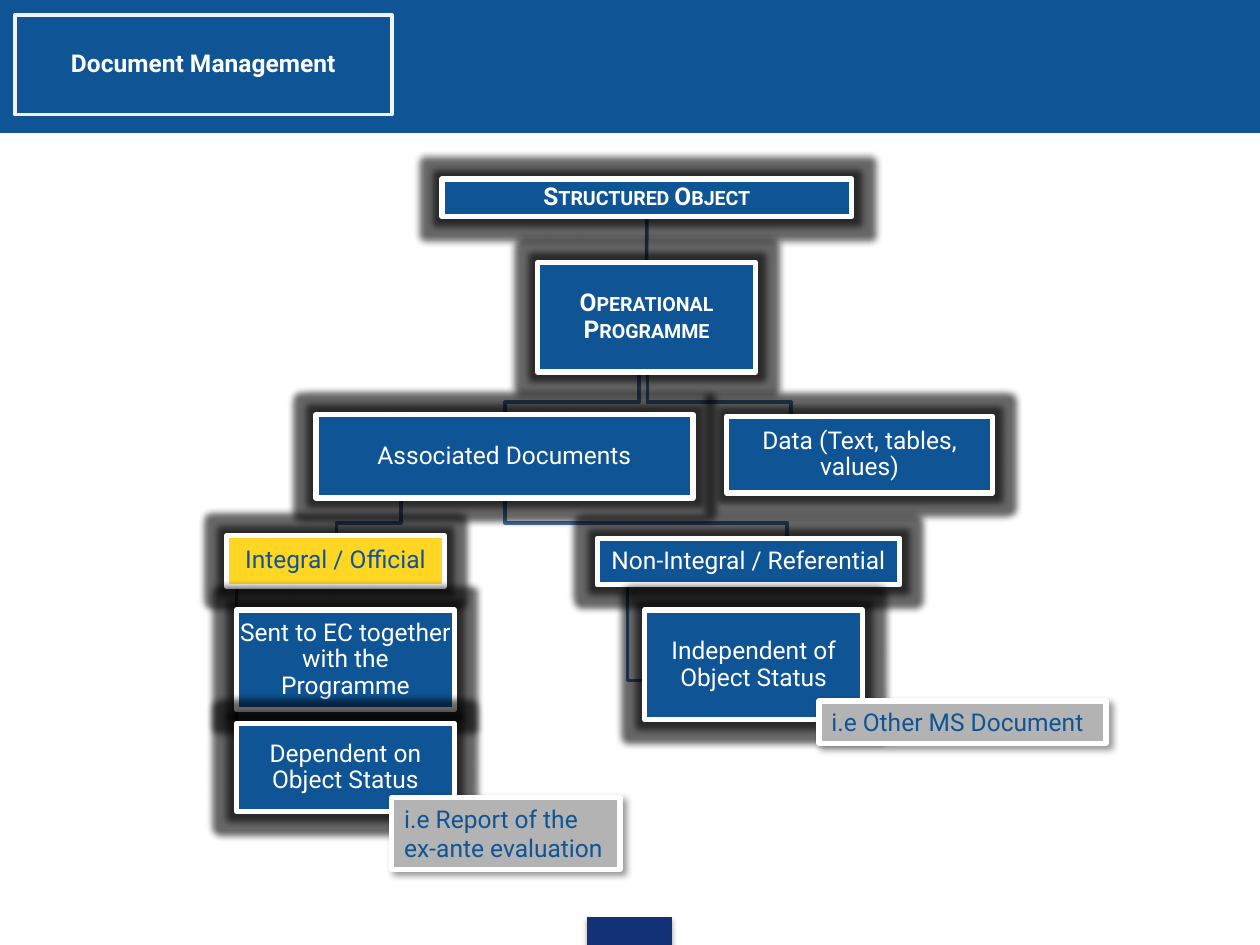
from lxml import etree
from pptx import Presentation
from pptx.dml.color import RGBColor
from pptx.enum import shapes, text
from pptx.oxml import ns
from pptx.util import Cm, Pt

COLOURS = {
    "blue": "0F5494", "navy": "133176", "yellow": "FFD624", "grey": "B3B3B3",
    "white": "FFFFFF", "frame": "F2F2F2", "elbow": "4875AC", "stem": "3F6797",
    "black": "000000",
}
FONT = "Roboto"
NODE_INSET = 0.03

NODES = {
    "Structured Object": (4.34, 0, 8.26, 0.76),
    "Operational Programme": (6.27, 1.68, 4.39, 2.21),
    "Associated Documents": (1.8, 4.75, 7.6, 1.68),
    "Integral / Official": (0, 7.19, 4.39, 1.02),
    "Sent to EC together with the Programme": (0.2, 8.69, 4.39, 2.01),
    "Dependent on Object Status": (0.2, 10.97, 4.39, 1.78),
    "Non-Integral / Referential": (7.47, 7.24, 6.1, 0.94),
    "Independent of Object Status": (8.43, 8.69, 4.39, 2.21),
    "Data (Text, tables, values)": (10.08, 4.78, 5.36, 1.55),
}
TITLE_NODES = ("Structured Object", "Operational Programme")
NOTES = {
    "i.e Report of the ex-ante evaluation": (3.33, 12.47, 4.6, 1.45),
    "i.e Other MS Document": (11.94, 10.52, 5.79, 0.86),
}
BRANCHES = [
    (8.48, 3.89, 4.5, 11.38, 4.78),
    (5.61, 6.4, 6.93, 11.3, 7.24),
    (3.51, 6.4, 6.93, 2.21, 7.19),
    (8.31, 3.89, 4.5, 5.61, 4.75),
]
HOOKS = [(8.08, 8.18, 10.11, 8.46), (0.2, 8.2, 12.65, 0.46), (0.2, 8.2, 9.83, 0.43)]


def colour(name):
    """Return the named colour."""
    return RGBColor.from_string(COLOURS[name])


def add_effect(shape, kind, alpha, **attributes):
    """Give a shape a black glow or outer shadow."""
    shape.shadow.inherit = False
    effects = shape._element.spPr.find(ns.qn("a:effectLst"))
    effect = etree.SubElement(effects, ns.qn("a:" + kind))
    for key, value in attributes.items():
        effect.set(key, str(value))
    tint = etree.SubElement(effect, ns.qn("a:srgbClr"), val=COLOURS["black"])
    etree.SubElement(tint, ns.qn("a:alpha"), val=str(alpha * 1000))


def add_box(page, box, fill, line, weight):
    """Add a rectangle with the given fill and outline."""
    shape = page.shapes.add_shape(shapes.MSO_SHAPE.RECTANGLE, *map(Cm, box))
    shape.shadow.inherit = False
    if fill:
        shape.fill.solid()
        shape.fill.fore_color.rgb = colour(fill)
    else:
        shape.fill.background()
    shape.line.color.rgb = colour(line)
    shape.line.width = Pt(weight)
    return shape


def write(shape, words, ink, bold=False):
    """Write one paragraph in a shape and return it."""
    shape.text_frame.word_wrap = True
    para = shape.text_frame.paragraphs[0]
    para.text = words
    para.font.name = FONT
    para.font.size = Pt(14)
    para.font.bold = bold
    para.font.color.rgb = colour(ink)
    return para


def write_centred(shape, words, ink, inset, bold=False):
    """Write a centred label with equal insets and return its paragraph."""
    frame = shape.text_frame
    frame.margin_left = frame.margin_right = Cm(inset)
    frame.margin_top = frame.margin_bottom = Cm(inset)
    frame.vertical_anchor = text.MSO_ANCHOR.MIDDLE
    para = write(shape, words, ink, bold)
    para.alignment = text.PP_ALIGN.CENTER
    para.line_spacing = 0.9
    return para


def add_route(page, points):
    """Draw an open line through the points."""
    start, *others = [(Cm(x), Cm(y)) for x, y in points]
    builder = page.shapes.build_freeform(*start)
    builder.add_line_segments(others, close=False)
    route = builder.convert_to_shape()
    route.shadow.inherit = False
    route.fill.background()
    route.line.color.rgb = colour("elbow")
    route.line.width = Pt(2)


def add_header(page, left, top, width, height):
    """Draw the title band with its framed heading."""
    add_box(page, (left, top, width, height), "blue", "blue", 0.75)
    frame = add_box(page, (left + 0.3, top + 0.3, 7.6, 2.01), None, "frame", 2)
    write_centred(frame, "Document Management", "white", 0.15, bold=True)


def add_footer(page, left, top, width, height):
    """Draw the tab at the foot of the page."""
    tab = add_box(page, (left, top, width, height), "navy", "navy", 0.75)
    add_effect(tab, "outerShdw", 35, blurRad=Pt(3.1), dist=Pt(1.8), dir=90 * 60000)


def add_tree(page, left, top):
    """Draw the document tree from its upper left corner."""
    def shift(x, y, *size):
        """Move a place from tree to page."""
        return (left + x, top + y, *size)

    for x1, y1, bend, x2, y2 in BRANCHES:
        add_route(page, [shift(x1, y1), shift(x1, bend), shift(x2, bend), shift(x2, y2)])
    for x1, y1, y2, x2 in HOOKS:
        add_route(page, [shift(x1, y1), shift(x1, y2), shift(x2, y2)])

    stem = page.shapes.add_connector(shapes.MSO_CONNECTOR.STRAIGHT, 0, 0, 0, 0)
    stem.line.color.rgb = colour("stem")
    stem.line.width = Pt(2)
    etree.SubElement(stem._element.spPr, ns.qn("a:effectLst"))

    nodes = {}
    for words, box in NODES.items():
        official = words == "Integral / Official"
        titled = words in TITLE_NODES
        node = add_box(page, shift(*box), "yellow" if official else "blue", "white", 3)
        add_effect(node, "glow", 60, rad=Pt(8))
        para = write_centred(node, words, "blue" if official else "white", NODE_INSET, titled)
        if titled:
            para.runs[0]._r.get_or_add_rPr().set("cap", "small")
        nodes[words] = node
    upper, lower = (nodes[words] for words in TITLE_NODES)
    stem.begin_connect(upper, 2)
    stem.end_connect(lower, 0)

    for words, box in NOTES.items():
        note = add_box(page, shift(*box), "grey", "white", 3)
        add_effect(note, "outerShdw", 40, blurRad=Pt(4), dist=Pt(3), dir=45 * 60000)
        write(note, words, "blue").alignment = text.PP_ALIGN.LEFT
        note.text_frame.vertical_anchor = text.MSO_ANCHOR.TOP
        note.text_frame.auto_size = text.MSO_AUTO_SIZE.SHAPE_TO_FIT_TEXT


def main():
    """Build and save the deck."""
    deck = Presentation()
    deck.slide_width, deck.slide_height = Cm(25.4), Cm(19.05)
    page = deck.slides.add_slide(deck.slide_layouts[6])
    add_header(page, 0, 0, 25.4, 2.67)
    add_footer(page, 11.84, 18.49, 1.7, 0.56)
    add_tree(page, 4.57, 3.61)
    deck.save("out.pptx")


if __name__ == "__main__":
    main()
